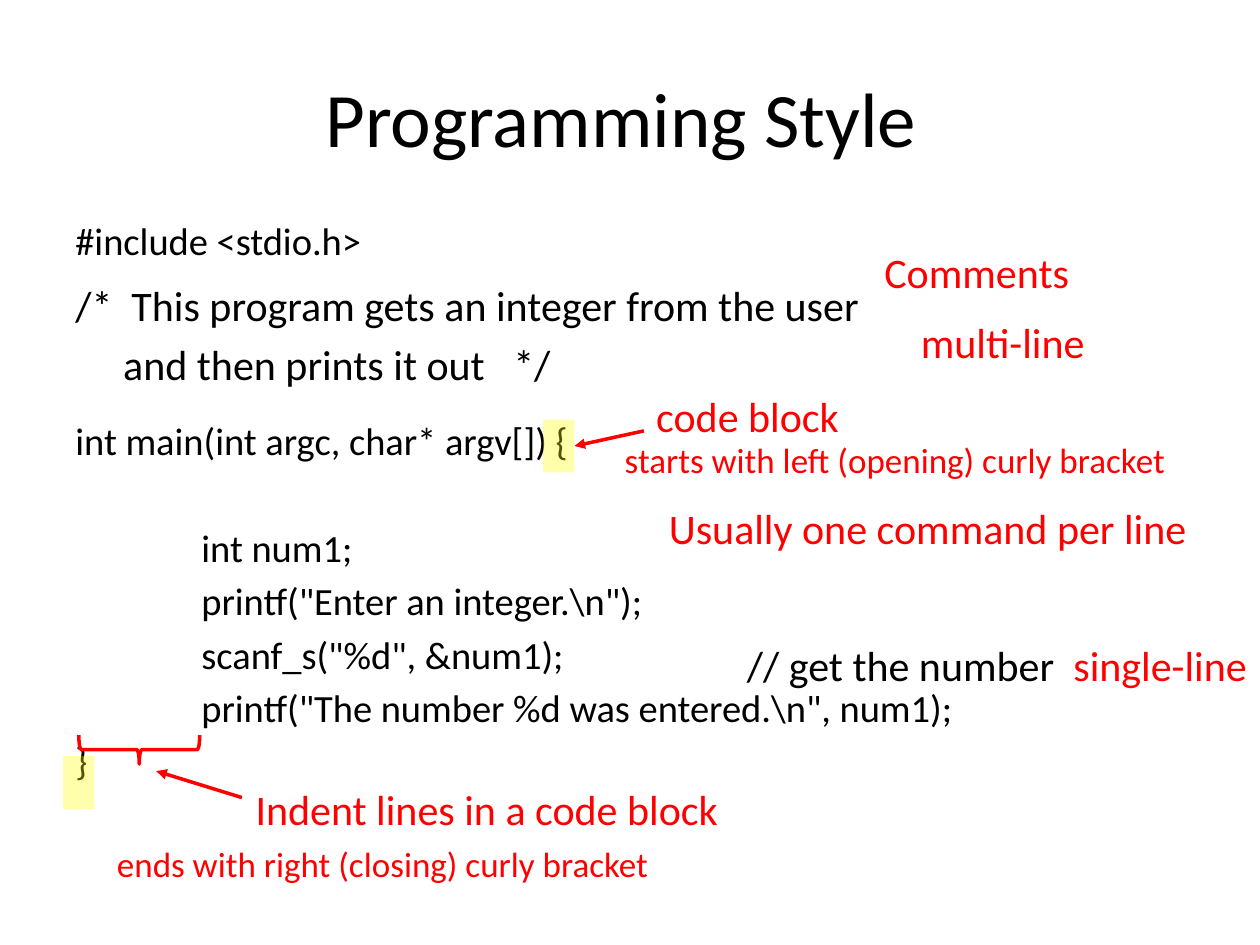
"""Builds a slide that annotates a short C program with notes on programming style."""
from lxml import etree
from pptx import Presentation
from pptx.dml.color import RGBColor
from pptx.enum.shapes import MSO_CONNECTOR, MSO_SHAPE
from pptx.enum.text import MSO_ANCHOR, PP_ALIGN
from pptx.oxml.ns import qn
from pptx.util import Inches, Pt

BLACK = RGBColor(0x00, 0x00, 0x00)
RED = RGBColor(0xFF, 0x00, 0x00)
YELLOW = RGBColor(0xFF, 0xFF, 0x00)
RECTANGLE = MSO_SHAPE.RECTANGLE
RIGHT_BRACE = MSO_SHAPE.RIGHT_BRACE
STRAIGHT = MSO_CONNECTOR.STRAIGHT
CENTER = PP_ALIGN.CENTER
MIDDLE = MSO_ANCHOR.MIDDLE
RIGHT_SIDE = 3

CODE_LINES = [
    ("#include <stdio.h>", 0),
    ("int main(int argc, char* argv[]) {", 88),
    ("\tint num1;", 35),
    ("\tprintf(\"Enter an integer.\\n\");", 4),
    ("\tscanf_s(\"%d\", &num1);", 4),
    ("\tprintf(\"The number %d was entered.\\n\", num1);", 4),
    ("}", 4),
]
NOTES = [
    ("Usually one command per line", 5.21, 3.94, 4.58, 24, RED),
    ("code block", 5.11, 3.05, 1.92, 24, RED),
    ("Indent lines in a code block", 1.93, 6.17, 4.07, 24, RED),
    ("Comments", 6.92, 1.91, 1.92, 24, RED),
    ("// get the number", 5.83, 5.03, 2.83, 24, BLACK),
    ("multi-line", 7.21, 2.46, 1.92, 24, RED),
    ("single-line", 8.42, 5.03, 1.58, 24, RED),
    ("starts with left (opening) curly bracket", 4.86, 3.43, 5.06, 20, RED),
    ("ends with right (closing) curly bracket", 0.83, 6.64, 5.06, 20, RED),
]


class StyledSlide:
    """Holds the style and the current slide."""

    font_name = "Calibri"
    line_width = Pt(2)

    def __init__(self, slide):
        self.slide = slide

    def add_run(self, paragraph, text, size, color):
        run = paragraph.add_run()
        run.text = text
        run.font.name = self.font_name
        run.font.size = Pt(size)
        run.font.color.rgb = color

    def title(self, text, left, top, width, height):
        shape = self.slide.shapes.title
        shape.left, shape.top = Inches(left), Inches(top)
        shape.width, shape.height = Inches(width), Inches(height)
        shape.text_frame.vertical_anchor = MIDDLE
        paragraph = shape.text_frame.paragraphs[0]
        paragraph.alignment = CENTER
        self.add_run(paragraph, text, 44, BLACK)

    def text(self, lines, left, top, width, height, size, color):
        shape = self.slide.shapes.add_textbox(
            Inches(left), Inches(top), Inches(width), Inches(height))
        frame = shape.text_frame
        frame.word_wrap = True
        for index, (text, space) in enumerate(lines):
            paragraph = frame.add_paragraph() if index else frame.paragraphs[0]
            paragraph.space_before = Pt(space)
            self.add_run(paragraph, text, size, color)
        return shape

    def indent(self, paragraph, distance):
        paragraph._p.get_or_add_pPr().set("marL", str(Inches(distance)))

    def tab_stop(self, paragraph, position):
        properties = paragraph._p.get_or_add_pPr()
        tab_list = etree.SubElement(properties, qn("a:tabLst"))
        etree.SubElement(tab_list, qn("a:tab"), pos=str(Inches(position)), algn="l")

    def highlight(self, left, top):
        shape = self.slide.shapes.add_shape(
            RECTANGLE, Inches(left), Inches(top), Inches(0.25), Inches(0.42))
        shape.shadow.inherit = False
        shape.fill.solid()
        shape.fill.fore_color.rgb = YELLOW
        color = shape._element.spPr.find(".//" + qn("a:srgbClr"))
        etree.SubElement(color, qn("a:alpha"), val="33000")
        shape.line.fill.background()
        return shape

    def brace(self, left, top, width, height):
        shape = self.slide.shapes.add_shape(
            RIGHT_BRACE, Inches(left), Inches(top), Inches(width), Inches(height))
        shape.rotation = 90
        shape.shadow.inherit = False
        shape.fill.background()
        shape.line.color.rgb = RED
        shape.line.width = self.line_width

    def arrow(self, start, end, target=None):
        connector = self.slide.shapes.add_connector(
            STRAIGHT, *(Inches(value) for value in (*start, *end)))
        if target is not None:
            connector.end_connect(target, RIGHT_SIDE)
        connector.line.color.rgb = RED
        connector.line.width = self.line_width
        properties = connector._element.spPr
        etree.SubElement(properties.find(qn("a:ln")), qn("a:tailEnd"), type="triangle")
        etree.SubElement(properties, qn("a:effectLst"))


def main():
    presentation = Presentation()
    presentation.slide_width = Inches(10)
    presentation.slide_height = Inches(7.5)
    page = StyledSlide(presentation.slides.add_slide(presentation.slide_layouts[5]))

    page.title("Programming Style ", 0.5, 0.3, 9, 1.25)
    code = page.text(CODE_LINES, 0.5, 1.67, 9.42, 5.53, 22, BLACK)
    for paragraph in code.text_frame.paragraphs:
        if paragraph.text.startswith("\t"):
            page.tab_stop(paragraph, 1)

    opening_bracket = page.highlight(4.31, 3.33)
    page.highlight(0.5, 6)
    page.arrow((5.11, 3.42), (4.56, 3.54), opening_bracket)
    page.arrow((1.92, 6.33), (1.24, 6.12))
    page.brace(0.99, 5.47, 0.23, 0.96)

    comment_lines = [("/*  This program gets an integer from the user", 0),
                     ("and then prints it out   */", 4.8)]
    comment = page.text(comment_lines, 0.5, 2.17, 7.67, 1.11, 24, BLACK)
    page.indent(comment.text_frame.paragraphs[1], 0.38)
    for text, left, top, width, size, color in NOTES:
        page.text([(text, 0)], left, top, width, 0.49, size, color)

    presentation.save("out.pptx")


if __name__ == "__main__":
    main()
